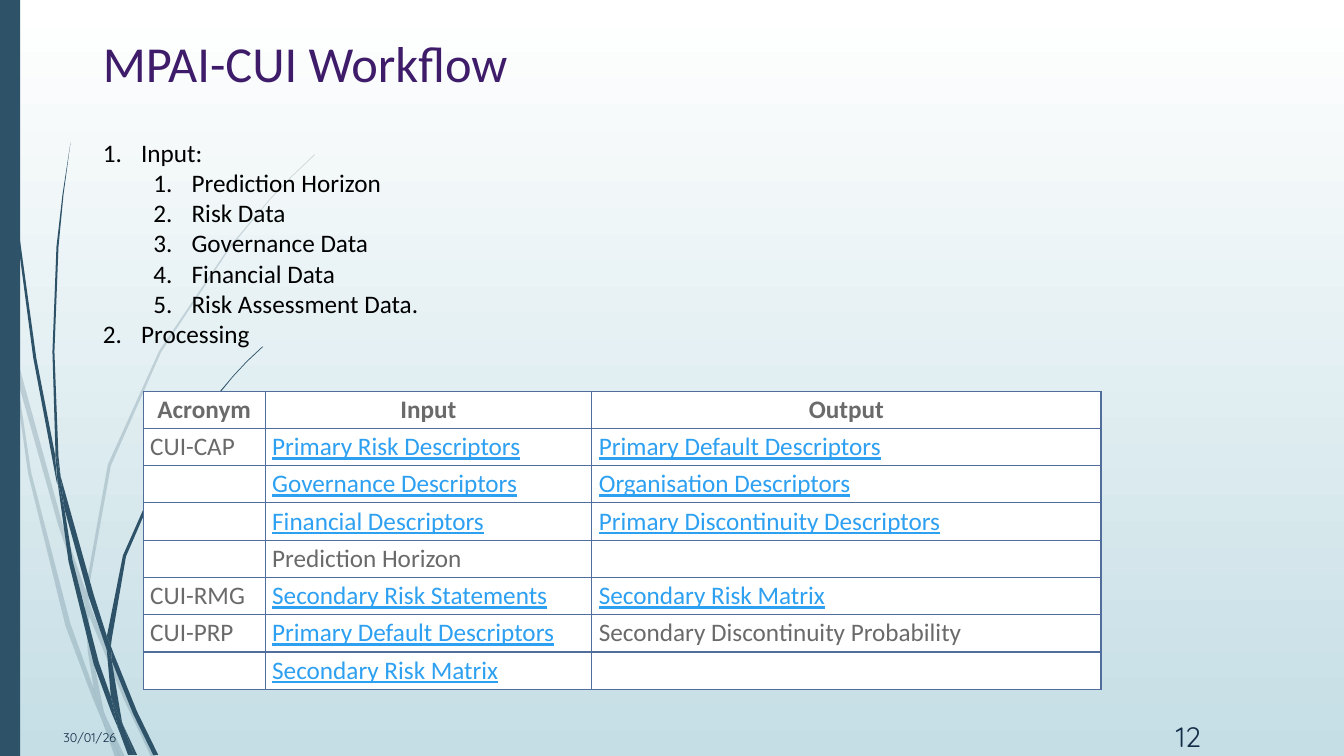
from dataclasses import dataclass
from pptx import Presentation
from pptx.dml.color import RGBColor
from pptx.enum.shapes import MSO_SHAPE as Shape
from pptx.enum.text import MSO_ANCHOR as Anchor, MSO_AUTO_SIZE as Fit, PP_ALIGN as Align
from pptx.oxml import parse_xml
from pptx.oxml.ns import nsdecls
from pptx.util import Inches, Pt

WHITE = RGBColor(0xFF, 0xFF, 0xFF)
BLACK = RGBColor(0, 0, 0)
MIST = RGBColor(0xC5, 0xDE, 0xE5)
TEAL = RGBColor(0x2E, 0x53, 0x69)
PURPLE = RGBColor(0x3F, 0x1C, 0x6A)
GREY = RGBColor(0x6A, 0x6A, 0x6A)
SKY = RGBColor(0x2D, 0xA0, 0xF1)
NAVY = RGBColor(0x13, 0x2C, 0x48)
EDGE = RGBColor(0x50, 0x6D, 0x9B)

Points = list[tuple[float, float]]


@dataclass
class Tuft:
    """Blades of grass of one opacity, each given by its corners."""
    alpha: int
    blades: list[Points]


@dataclass
class Item:
    text: str
    level: int = 0


@dataclass
class Cell:
    text: str = ""
    link: bool = False
    head: bool = False


@dataclass
class Note:
    text: str
    box: tuple[float, float, float, float]
    size: int


PALE = Tuft(20, [
    [(.11, 3.5), (.09, 3.22), (0, 2.82), (0, 2.99), (.1, 3.44)],
    [(.58, 5.22), (.84, 5.99), (.85, 5.86), (.62, 5.2), (.14, 3.45), (.17, 3.76)],
    [(.92, 6.07), (.88, 5.96), (.88, 6.1), (1.23, 6.94), (1.5, 7.51), (1.55, 7.51),
     (1.27, 6.92)],
    [(1.19, 7.51), (1.24, 7.51), (1.05, 7.11)],
    [(.93, 6.83), (.7, 6.19), (.31, 4.69), (.17, 3.76), (.11, 3.5), (.28, 4.7), (.65, 6.21),
     (.92, 6.93), (1.01, 7.14), (.99, 7.07)],
    [(.84, 5.99), (.87, 6.46), (.93, 6.83), (.96, 6.92), (1.05, 7.11), (1.03, 7.06),
     (.91, 6.46), (.88, 6.1), (.88, 6.08)],
    [(.88, 5.84), (1.1, 4.62), (1.6, 3.49), (2.29, 2.45), (2.68, 1.98), (2.9, 1.75),
     (3.12, 1.54), (3.12, 1.53), (2.89, 1.75), (2.68, 1.97), (2.28, 2.44), (1.58, 3.48),
     (1.07, 4.61), (.85, 5.84), (.85, 5.86), (.88, 5.96)],
    [(1.01, 7.14), (1.14, 7.51), (1.19, 7.51)],
    [(.88, 6.08), (.88, 6.1), (.88, 5.96), (.85, 5.86), (.84, 5.99)],
    [(.96, 6.92), (.93, 6.83), (.99, 7.07), (1.01, 7.14), (1.19, 7.51), (1.05, 7.11)],
])
DARK = Tuft(100, [
    [(.07, 1.1), (.17, 2.33), (.33, 3.55), (.56, 4.77), (.57, 4.81), (.55, 4.57), (.55, 4.53),
     (.36, 3.55), (.19, 2.32), (.08, 1.09), (.05, .48), (.04, 0), (.03, 0), (.04, .48)],
    [(.88, 5.92), (1.06, 6.45), (1.06, 6.33), (1.06, 6.31), (.93, 5.9), (.6, 4.72),
     (.64, 5.05)],
    [(1.13, 6.49), (1.1, 6.41), (1.11, 6.56), (1.32, 7.08), (1.52, 7.49), (1.57, 7.49),
     (1.36, 7.06)],
    [(1.1, 6.91), (.98, 6.57), (.72, 5.56), (.64, 5.05), (.57, 4.77), (.68, 5.57), (.93, 6.59),
     (1.11, 7.08), (1.17, 7.22), (1.16, 7.17)],
    [(.6, 4.72), (.58, 4.53), (.54, 3.49), (.58, 2.45), (.63, 1.93), (.7, 1.41), (.62, 1.93),
     (.56, 2.45), (.52, 3.49), (.55, 4.49)],
    [(1.33, 7.49), (1.36, 7.49), (1.22, 7.19)],
    [(.57, 4.77), (.64, 5.05), (.6, 4.72), (.55, 4.49), (.55, 4.53)],
    [(1.11, 6.33), (1.25, 5.52), (1.58, 4.76), (2.05, 4.06), (2.31, 3.74), (2.45, 3.59),
     (2.61, 3.44), (2.6, 3.44), (2.45, 3.58), (2.31, 3.73), (2.04, 4.05), (1.56, 4.74),
     (1.22, 5.51), (1.06, 6.31), (1.1, 6.41)],
    [(1.17, 7.22), (1.27, 7.49), (1.31, 7.49)],
    [(1.06, 6.45), (1.1, 6.91), (1.16, 7.06), (1.22, 7.19), (1.21, 7.16), (1.11, 6.56),
     (1.09, 6.51)],
    [(1.06, 6.45), (1.09, 6.51), (1.11, 6.56), (1.1, 6.41), (1.06, 6.31), (1.06, 6.33)],
    [(1.16, 7.06), (1.1, 6.91), (1.16, 7.17), (1.17, 7.22), (1.3, 7.49), (1.33, 7.49),
     (1.22, 7.19)],
])
ITEMS = [Item("Input:"), Item("Prediction Horizon", 1), Item("Risk Data", 1),
         Item("Governance Data", 1), Item("Financial Data", 1),
         Item("Risk Assessment Data.", 1), Item("Processing")]
ROWS = [
    [Cell("Acronym", head=True), Cell("Input", head=True), Cell("Output", head=True)],
    [Cell("CUI-CAP"), Cell("Primary Risk Descriptors", True),
     Cell("Primary Default Descriptors", True)],
    [Cell(), Cell("Governance Descriptors", True), Cell("Organisation Descriptors", True)],
    [Cell(), Cell("Financial Descriptors", True),
     Cell("Primary Discontinuity Descriptors", True)],
    [Cell(), Cell("Prediction Horizon"), Cell()],
    [Cell("CUI-RMG"), Cell("Secondary Risk Statements", True),
     Cell("Secondary Risk Matrix", True)],
    [Cell("CUI-PRP"), Cell("Primary Default Descriptors", True),
     Cell("Secondary Discontinuity Probability")],
    [Cell(), Cell("Secondary Risk Matrix", True), Cell()],
]
WIDTHS = [1.21, 3.24, 5.05]
HIGH = 0.37
NOTES = [Note("30/01/26", (0, 7.11, 1.25, .41), 9), Note("12", (11.16, 7.1, .85, .4), 20)]


def paint(shape) -> None:
    shape.shadow.inherit = False
    shape.fill.solid()
    shape.fill.fore_color.rgb = TEAL
    shape.line.fill.background()


def draw_blade(shapes, blade: Points, alpha: int) -> None:
    pts = [(Inches(x), Inches(y)) for x, y in blade]
    pen = shapes.build_freeform(*pts[0], scale=1.0)
    pen.add_line_segments(pts[1:], close=True)
    shape = pen.convert_to_shape()
    paint(shape)
    if alpha < 100:
        color = shape.fill._xPr.find(".//{*}srgbClr")
        color.append(parse_xml(f'<a:alpha {nsdecls("a")} val="{alpha * 1000}"/>'))


def place(shape, left: float, top: float, width: float, height: float) -> None:
    shape.left, shape.top = Inches(left), Inches(top)
    shape.width, shape.height = Inches(width), Inches(height)


def add_run(para, text: str, size: int, color: RGBColor, face: str = "Calibri"):
    run = para.add_run()
    run.text = text
    run.font.size, run.font.name = Pt(size), face
    run.font.color.rgb = color
    return run


def add_item(para, item: Item) -> None:
    para.level = item.level
    props = para._p.get_or_add_pPr()
    props.set("marL", str(Inches(.38 + item.level * .5)))
    props.set("indent", str(Inches(-.38)))
    props.append(parse_xml(f'<a:buFont {nsdecls("a")} typeface="+mj-lt"/>'))
    props.append(parse_xml(f'<a:buAutoNum {nsdecls("a")} type="arabicPeriod"/>'))
    para.alignment = Align.JUSTIFY
    para.space_before = para.space_after = Pt(0)
    add_run(para, item.text, 18, BLACK)


def fill_cell(cell, data: Cell) -> None:
    cell.margin_left = cell.margin_right = Inches(.07)
    cell.margin_top = cell.margin_bottom = Inches(.03)
    cell.vertical_anchor = Anchor.MIDDLE
    props = cell._tc.get_or_add_tcPr()
    for side in "LRTB":
        props.append(parse_xml(
            f'<a:ln{side} {nsdecls("a")} w="{Pt(1)}"><a:solidFill>'
            f'<a:srgbClr val="{EDGE}"/></a:solidFill></a:ln{side}>'))
    cell.fill.solid()
    cell.fill.fore_color.rgb = WHITE
    para = cell.text_frame.paragraphs[0]
    para.alignment = Align.CENTER if data.head else Align.LEFT
    para.font.size = Pt(18)
    if data.text:
        run = add_run(para, data.text, 18, SKY if data.link else GREY)
        run.font.bold, run.font.underline = data.head, data.link


def add_grid(shapes) -> None:
    table = shapes.add_table(len(ROWS), len(WIDTHS), Inches(1.42), Inches(3.88),
                             Inches(sum(WIDTHS)), Inches(HIGH * len(ROWS))).table
    table.first_row = table.horz_banding = False
    for col, width in zip(table.columns, WIDTHS):
        col.width = Inches(width)
    for row, cells in zip(table.rows, ROWS):
        row.height = Inches(HIGH)
        for cell, data in zip(row.cells, cells):
            fill_cell(cell, data)


def add_note(shapes, note: Note) -> None:
    frame = shapes.add_textbox(*map(Inches, note.box)).text_frame
    frame.word_wrap = True
    frame.vertical_anchor = Anchor.MIDDLE
    para = frame.paragraphs[0]
    para.alignment = Align.RIGHT
    add_run(para, note.text, note.size, NAVY, "Quicksand")


def main() -> None:
    deck = Presentation()
    deck.slide_width, deck.slide_height = Inches(13.33), Inches(7.5)
    slide = deck.slides.add_slide(deck.slide_layouts[1])
    shapes = slide.shapes
    back = slide.background.fill
    back.gradient()
    back.gradient_angle = 270
    for stop, color in zip(back.gradient_stops, (WHITE, MIST)):
        stop.color.rgb = color

    title, body = shapes.title, slide.placeholders[1]
    for tuft in (PALE, DARK):
        for blade in tuft.blades:
            draw_blade(shapes, blade, tuft.alpha)
    paint(shapes.add_shape(Shape.RECTANGLE, 0, 0, Inches(.2), Inches(7.5)))
    for holder in (title, body):
        shapes._spTree.append(holder._element)

    place(title, .92, .27, 11.5, .79)
    title.text_frame.vertical_anchor = Anchor.TOP
    head = title.text_frame.paragraphs[0]
    head.alignment = Align.LEFT
    add_run(head, "MPAI-CUI Workflow", 36, PURPLE)

    place(body, .92, 1.31, 11.86, 5.22)
    frame = body.text_frame
    frame.auto_size = Fit.NONE
    for n, item in enumerate(ITEMS):
        add_item(frame.add_paragraph() if n else frame.paragraphs[0], item)

    add_grid(shapes)
    for note in NOTES:
        add_note(shapes, note)
    deck.save("out.pptx")


if __name__ == "__main__":
    main()
